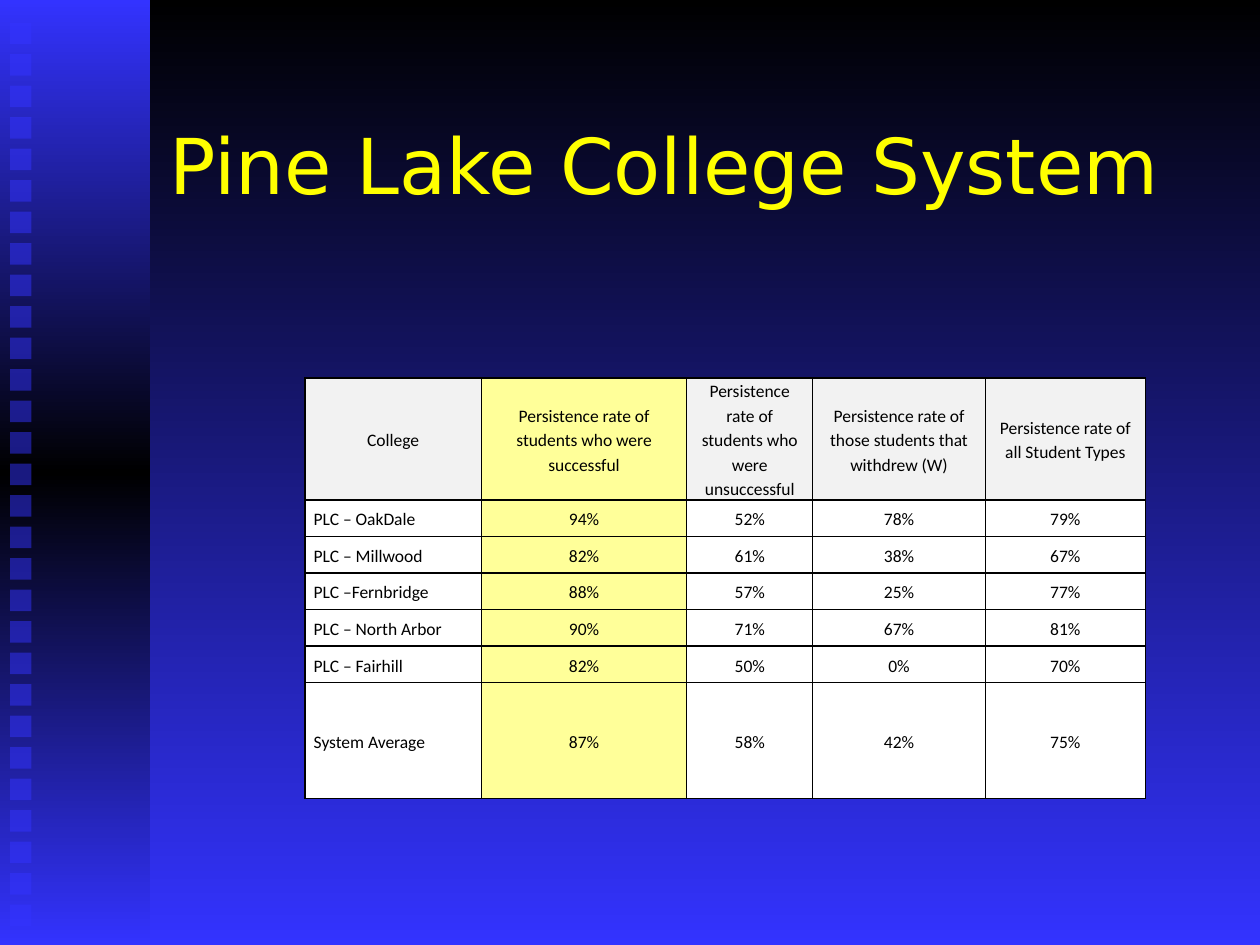
from copy import deepcopy
from dataclasses import dataclass

from lxml import etree
from pptx import Presentation
from pptx.dml.color import RGBColor
from pptx.dml.fill import FillFormat
from pptx.enum import shapes, text
from pptx.oxml import ns
from pptx.slide import Slide
from pptx.util import Inches, Pt


@dataclass(frozen=True)
class Theme:
    black: str = "000000"
    blue: str = "3333FF"
    title: str = "FFFF00"
    header: str = "F2F2F2"
    highlight: str = "FFFF99"
    body: str = "FFFFFF"
    title_font: str = "DejaVu Sans"
    table_font: str = "Calibri"
    title_size: int = 44
    table_size: int = 10


@dataclass(frozen=True)
class College:
    name: str
    successful: str
    unsuccessful: str
    withdrew: str
    overall: str
    height: float = 0.29

    def texts(self) -> list[str]:
        return [self.name, self.successful, self.unsuccessful, self.withdrew, self.overall]


THEME = Theme()
HIGHLIGHT_COLUMN = 1
COLUMN_WIDTHS = [1.4, 1.63, 1, 1.37, 1.27]
ROWS = [
    College("College",
            "Persistence rate of students who were successful",
            "Persistence rate of students who were unsuccessful",
            "Persistence rate of those students that withdrew (W)",
            "Persistence rate of all Student Types", 0.97),
    College("PLC – OakDale", "94%", "52%", "78%", "79%"),
    College("PLC – Millwood", "82%", "61%", "38%", "67%"),
    College("PLC –Fernbridge", "88%", "57%", "25%", "77%"),
    College("PLC – North Arbor", "90%", "71%", "67%", "81%"),
    College("PLC – Fairhill", "82%", "50%", "0%", "70%"),
    College("System Average", "87%", "58%", "42%", "75%", 0.92),
]


def rgb(color: str) -> RGBColor:
    return RGBColor.from_string(color)


def add_run(paragraph, words: str, font: str, size: int, color: str) -> None:
    run = paragraph.add_run()
    run.text = words
    run.font.name = font
    run.font.size = Pt(size)
    run.font.color.rgb = rgb(color)


def fill_downward(fill: FillFormat, colors: list[str]) -> None:
    """Vertical gradient with evenly spaced colours, first one on top."""
    fill.gradient()
    fill.gradient_angle = 270
    stop_list = fill.gradient_stops[0]._gs.getparent()
    for _ in colors[2:]:
        stop_list.append(deepcopy(stop_list[0]))
    for i, (stop, color) in enumerate(zip(fill.gradient_stops, colors)):
        stop.position = i / (len(colors) - 1)
        stop.color.rgb = rgb(color)


def add_rect(slide: Slide, left: float, top: float, width: float, height: float):
    rect = slide.shapes.add_shape(shapes.MSO_SHAPE.RECTANGLE, Inches(left), Inches(top),
                                  Inches(width), Inches(height))
    rect.shadow.inherit = False
    rect.line.fill.background()
    return rect


def add_sidebar(slide: Slide) -> None:
    band = add_rect(slide, 0, 0, 1.19, 7.5)
    fill_downward(band.fill, [THEME.blue, THEME.black, THEME.blue])
    for i in range(29):
        square = add_rect(slide, 0.08, 0.18 + 0.25 * i, 0.17, 0.17)
        square.fill.solid()
        square.fill.fore_color.rgb = rgb(THEME.blue)
        color = square.fill._xPr.find(".//" + ns.qn("a:srgbClr"))
        etree.SubElement(color, ns.qn("a:alpha"), val="50000")


def add_title(slide: Slide, words: str) -> None:
    title = slide.shapes.add_textbox(Inches(1.25), Inches(0.67), Inches(8.5), Inches(1.25))
    frame = title.text_frame
    frame.word_wrap = True
    frame.vertical_anchor = text.MSO_ANCHOR.MIDDLE
    add_run(frame.paragraphs[0], words, THEME.title_font, THEME.title_size, THEME.title)


def add_borders(cell) -> None:
    properties = cell._tc.get_or_add_tcPr()
    for side in ("lnL", "lnR", "lnT", "lnB"):
        line = etree.SubElement(properties, ns.qn(f"a:{side}"), w=str(Pt(1)))
        solid = etree.SubElement(line, ns.qn("a:solidFill"))
        etree.SubElement(solid, ns.qn("a:srgbClr"), val=THEME.black)


def write_cell(cell, words: str, fill: str, centered: bool) -> None:
    add_borders(cell)
    cell.fill.solid()
    cell.fill.fore_color.rgb = rgb(fill)
    cell.vertical_anchor = text.MSO_ANCHOR.MIDDLE
    cell.margin_left = cell.margin_right = Inches(0.07)
    cell.margin_top = cell.margin_bottom = 0
    paragraph = cell.text_frame.paragraphs[0]
    paragraph.alignment = text.PP_ALIGN.CENTER if centered else text.PP_ALIGN.LEFT
    paragraph.line_spacing = 1.15
    add_run(paragraph, words, THEME.table_font, THEME.table_size, THEME.black)


def add_persistence_table(slide: Slide) -> None:
    table = slide.shapes.add_table(
        len(ROWS), len(COLUMN_WIDTHS), Inches(2.42), Inches(3),
        Inches(sum(COLUMN_WIDTHS)), Inches(sum(row.height for row in ROWS))).table
    for column, width in zip(table.columns, COLUMN_WIDTHS):
        column.width = Inches(width)
    for r, college in enumerate(ROWS):
        table.rows[r].height = Inches(college.height)
        for c, words in enumerate(college.texts()):
            plain = THEME.header if r == 0 else THEME.body
            fill = THEME.highlight if c == HIGHLIGHT_COLUMN else plain
            write_cell(table.cell(r, c), words, fill, centered=r == 0 or c > 0)


def main() -> None:
    deck = Presentation()
    deck.slide_width, deck.slide_height = Inches(10), Inches(7.5)
    slide = deck.slides.add_slide(deck.slide_layouts[6])

    # Backdrop
    fill_downward(slide.background.fill, [THEME.black, THEME.blue])
    add_sidebar(slide)

    # Content
    add_title(slide, "Pine Lake College System")
    add_persistence_table(slide)

    deck.save("out.pptx")


if __name__ == "__main__":
    main()
